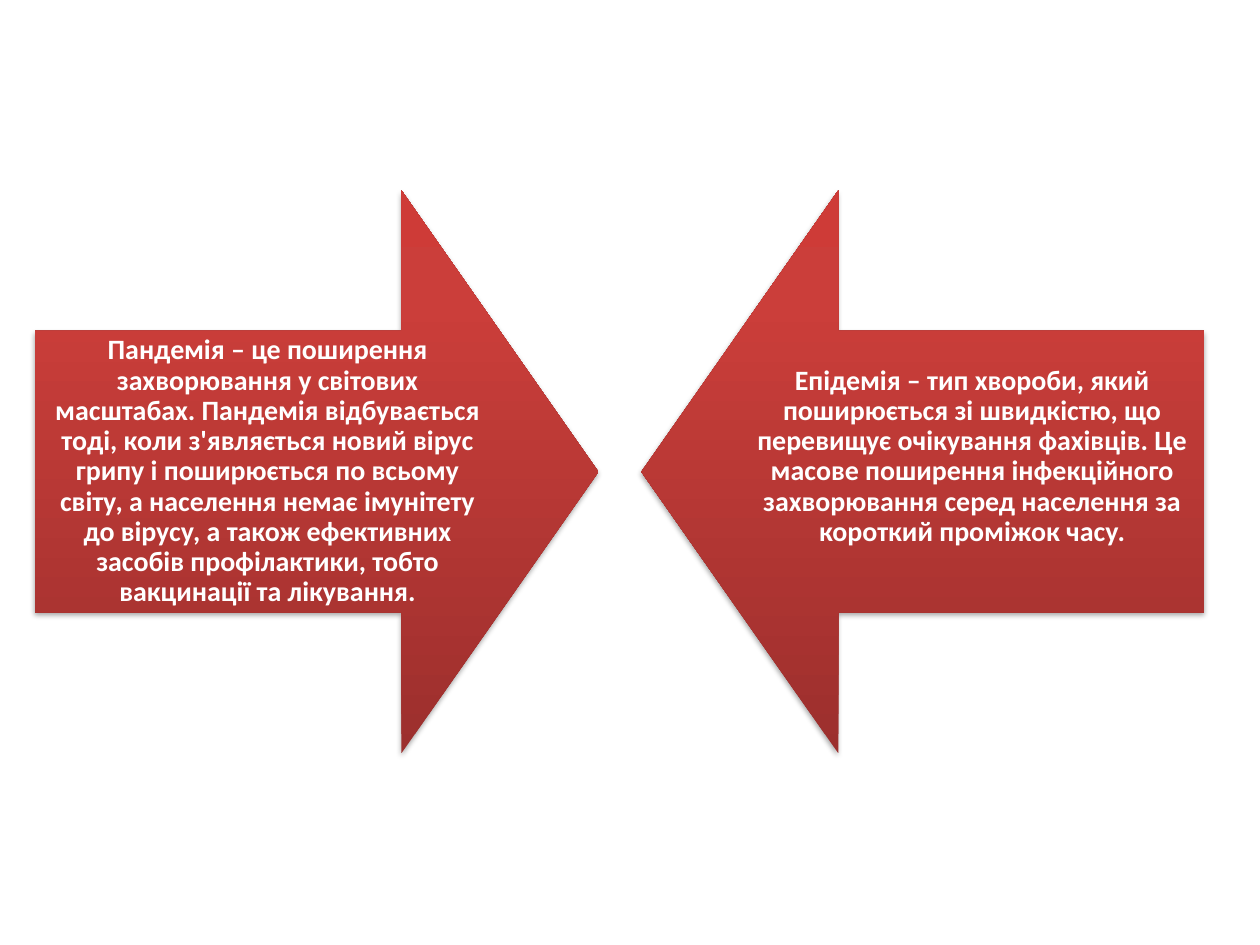
from copy import deepcopy
from dataclasses import dataclass

from lxml import etree
from pptx import Presentation, util as u
from pptx.dml.color import RGBColor
from pptx.enum import shapes, text
from pptx.oxml.ns import qn

WHITE = RGBColor(0xFF, 0xFF, 0xFF)
RED_STOPS = [
    (0, RGBColor(0x9C, 0x2F, 0x2D)),
    (0.8, RGBColor(0xCB, 0x3E, 0x3A)),
    (1, RGBColor(0xCE, 0x3B, 0x37)),
]
SIDE = u.Inches(4.47)
TOP = u.Inches(1.51)
INSET = u.Inches(0.12)
LINE = u.Inches(0.24)


@dataclass
class Definition:
    arrow: shapes.MSO_SHAPE
    left: float
    wording: str
    lift: int = 0  # extra bottom inset that raises the centred text


DEFINITIONS = [
    Definition(
        shapes.MSO_SHAPE.RIGHT_ARROW, 0.28,
        "Пандемія – це поширення захворювання у світових масштабах. "
        "Пандемія відбувається тоді, коли з'являється новий вірус грипу "
        "і поширюється по всьому світу, а населення немає імунітету до "
        "вірусу, а також ефективних засобів профілактики, тобто "
        "вакцинації та лікування."),
    Definition(
        shapes.MSO_SHAPE.LEFT_ARROW, 5.09,
        "Епідемія – тип хвороби, який поширюється зі швидкістю, що "
        "перевищує очікування фахівців. Це масове поширення інфекційного "
        "захворювання серед населення за короткий проміжок часу.",
        lift=LINE),
]


def fill_red(sp) -> None:
    """Vertical three-stop gradient, darkest at the bottom."""
    sp.fill.gradient()
    sp.fill.gradient_angle = 90
    stop_list = sp._element.spPr.find(".//" + qn("a:gsLst"))
    stop_list.append(deepcopy(stop_list[-1]))
    for stop, (position, color) in zip(sp.fill.gradient_stops, RED_STOPS):
        stop.position = position
        stop.color.rgb = color
    sp.line.fill.background()


def add_shadow(sp) -> None:
    sp.shadow.inherit = False
    effects = sp._element.spPr.find(qn("a:effectLst"))
    shadow = etree.SubElement(
        effects, qn("a:outerShdw"), blurRad=str(u.Pt(3.1)),
        dist=str(u.Pt(1.8)), dir="5400000", rotWithShape="0")
    color = etree.SubElement(shadow, qn("a:srgbClr"), val="000000")
    etree.SubElement(color, qn("a:alpha"), val="35000")


def add_definition(s, item: Definition) -> None:
    sp = s.shapes.add_shape(item.arrow, u.Inches(item.left), TOP, SIDE, SIDE)
    sp.adjustments[0] = 0.5
    sp.adjustments[1] = 0.35
    fill_red(sp)
    add_shadow(sp)

    tf = sp.text_frame
    tf.word_wrap = True
    tf.vertical_anchor = text.MSO_ANCHOR.MIDDLE
    tf.margin_left = tf.margin_right = tf.margin_top = INSET
    tf.margin_bottom = INSET + item.lift
    p = tf.paragraphs[0]
    p.text = item.wording
    p.alignment = text.PP_ALIGN.CENTER
    p.line_spacing = 0.9
    p.font.name = "Calibri"
    p.font.size = u.Pt(16)
    p.font.bold = True
    p.font.color.rgb = WHITE


def main() -> None:
    prs = Presentation()
    prs.slide_width, prs.slide_height = u.Inches(10), u.Inches(7.5)
    s = prs.slides.add_slide(prs.slide_layouts[6])
    for item in DEFINITIONS:
        add_definition(s, item)
    prs.save("out.pptx")


if __name__ == "__main__":
    main()
